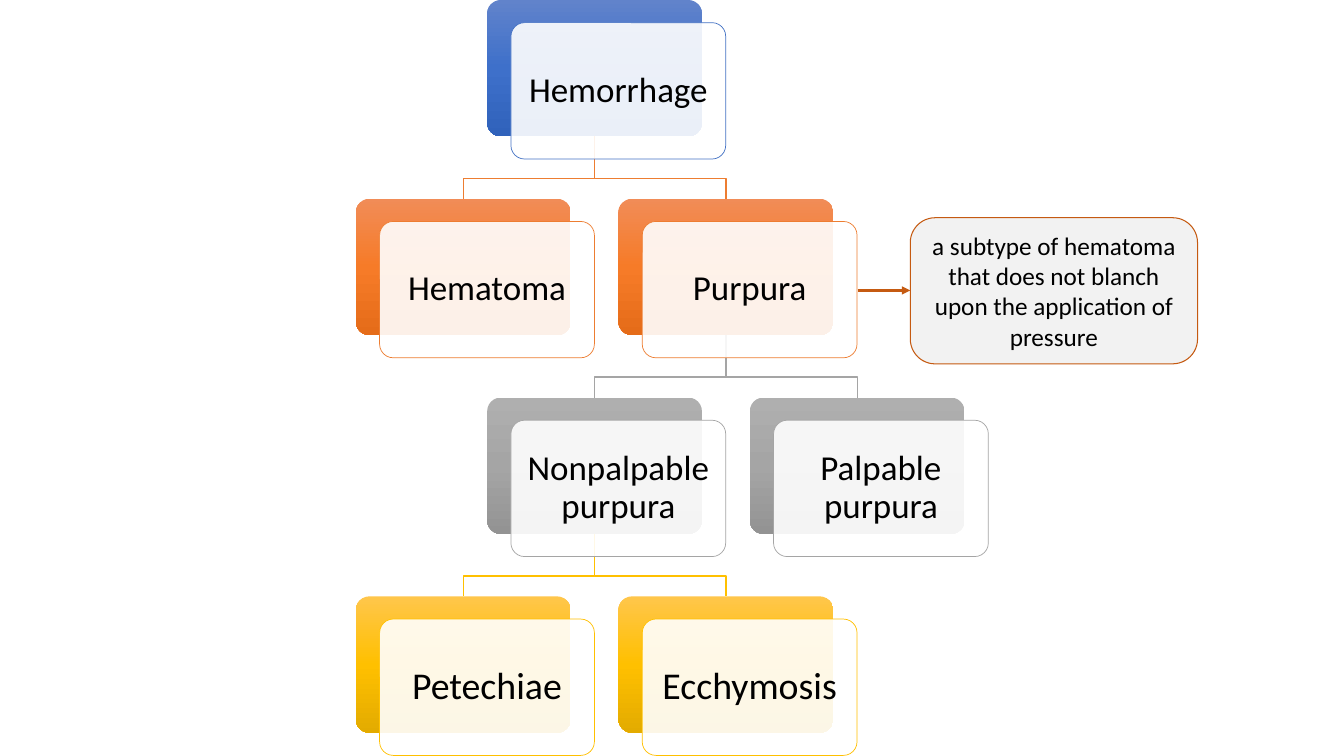
"""Build a slide with a tree of hemorrhage types and a note on purpura."""
from copy import deepcopy

from pptx import Presentation
from pptx.dml.color import RGBColor
from pptx.enum.shapes import MSO_CONNECTOR as CONN, MSO_SHAPE as SHAPE
from pptx.enum.text import MSO_ANCHOR as ANCHOR, PP_ALIGN as ALIGN
from pptx.oxml.ns import qn
from pptx.util import Pt
from lxml.etree import SubElement

COLORS = {
    "white": "FFFFFF", "text": "000000", "note": "F2F2F2", "rust": "C55A11",
    "blue": "4472C4", "orange": "ED7D31", "gray": "A5A5A5", "gold": "FFC000",
}
GRADIENTS = {
    "blue": ("6183CB", "3E70CA", "3062BB"),
    "orange": ("F18C57", "F67B28", "E56C19"),
    "gray": ("AFAFAF", "A5A5A5", "939393"),
    "gold": ("FFC64B", "FFC000", "E3AB00"),
}
LEVEL_COLORS = ("blue", "orange", "gray", "gold")
LEVEL_SIZES = (25, 25, 25, 27)
NODES = {
    "Hemorrhage": (0, 1, None),
    "Hematoma": (1, 0, "Hemorrhage"),
    "Purpura": (1, 2, "Hemorrhage"),
    "Nonpalpable purpura": (2, 1, "Purpura"),
    "Palpable purpura": (2, 3, "Purpura"),
    "Petechiae": (3, 0, "Nonpalpable purpura"),
    "Ecchymosis": (3, 2, "Nonpalpable purpura"),
}
LEFT, COL_STEP, ROW_STEP = 254.2, 93.8, 142
BOX_W, BOX_H = 153.4, 97.4
CARD_DX, CARD_DY = 17, 16.2
ELBOW = 30


def rgb(name):
    """Return the colour with this name."""
    return RGBColor.from_string(COLORS[name])


def corner(node):
    """Return the top left corner of a node's back box."""
    row, col, _ = NODES[node]
    return LEFT + col * COL_STEP, row * ROW_STEP


def set_line(sp, color, width):
    """Set the line colour and width of a shape."""
    sp.line.color.rgb = rgb(color)
    sp.line.width = Pt(width)


def add_link(slide, parent, child, color):
    """Draw an elbow line from a parent box to a child box."""
    (x1, y1), (x2, y2) = corner(parent), corner(child)
    x1, x2, y1 = x1 + BOX_W / 2, x2 + BOX_W / 2, y1 + BOX_H
    fb = slide.shapes.build_freeform(Pt(x1), Pt(y1))
    bends = [(x1, y1 + ELBOW), (x2, y1 + ELBOW), (x2, y2)]
    fb.add_line_segments([(Pt(x), Pt(y)) for x, y in bends], close=False)
    sp = fb.convert_to_shape()
    sp.shadow.inherit = False
    sp.fill.background()
    set_line(sp, color, 1)


def add_round_box(slide, x, y, w, h, adj):
    """Add a rounded rectangle without a shadow."""
    sp = slide.shapes.add_shape(SHAPE.ROUNDED_RECTANGLE, Pt(x), Pt(y), Pt(w), Pt(h))
    sp.adjustments[0] = adj
    sp.shadow.inherit = False
    return sp


def fill_solid(sp, color):
    """Give a shape a plain fill."""
    sp.fill.solid()
    sp.fill.fore_color.rgb = rgb(color)


def fill_gradient(sp, stops):
    """Give a shape a downward gradient of three colours."""
    sp.fill.gradient()
    sp.fill.gradient_angle = 270
    gs_list = sp._element.spPr.find(".//" + qn("a:gsLst"))
    gs_list.insert(1, deepcopy(gs_list[0]))
    for stop, pos, color in zip(sp.fill.gradient_stops, (0, 0.5, 1), stops):
        stop.position = pos
        stop.color.rgb = RGBColor.from_string(color)


def write(sp, text, size, inset_x, inset_y, spacing):
    """Write centred text in a shape."""
    tf = sp.text_frame
    frame_format = {
        "word_wrap": True, "vertical_anchor": ANCHOR.MIDDLE,
        "margin_left": Pt(inset_x), "margin_right": Pt(inset_x),
        "margin_top": Pt(inset_y), "margin_bottom": Pt(inset_y),
    }
    for name, value in frame_format.items():
        setattr(tf, name, value)
    p = tf.paragraphs[0]
    p.alignment, p.line_spacing = ALIGN.CENTER, spacing
    r = p.add_run()
    r.text = text
    for name, value in {"name": "Calibri", "size": Pt(size)}.items():
        setattr(r.font, name, value)
    r.font.color.rgb = rgb("text")


def add_node(slide, node):
    """Add a back box with a translucent labelled card over it."""
    x, y = corner(node)
    level = NODES[node][0]
    color, size = LEVEL_COLORS[level], LEVEL_SIZES[level]
    back = add_round_box(slide, x, y, BOX_W, BOX_H, 0.1)
    fill_gradient(back, GRADIENTS[color])
    back.line.fill.background()
    card = add_round_box(slide, x + CARD_DX, y + CARD_DY, BOX_W, BOX_H, 0.1)
    fill_solid(card, "white")
    clr = card._element.spPr.find(qn("a:solidFill"))[0]
    SubElement(clr, qn("a:alpha")).set("val", "90000")
    set_line(card, color, 0.5)
    write(card, node, size, size * 0.3, size * 0.3, 0.9)


def add_note(slide, text):
    """Add the note beside the tree."""
    sp = add_round_box(slide, 650.2, 155.5, 205.2, 104.4, 0.17)
    fill_solid(sp, "note")
    set_line(sp, "rust", 0.75)
    write(sp, text, 18, 7.2, 3.6, 1.0)


def add_arrow(slide, x1, x2, y):
    """Draw a level arrow."""
    sp = slide.shapes.add_connector(CONN.STRAIGHT, Pt(x1), Pt(y), Pt(x2), Pt(y))
    set_line(sp, "rust", 1.5)
    SubElement(sp.line._get_or_add_ln(), qn("a:tailEnd")).set("type", "triangle")
    SubElement(sp._element.spPr, qn("a:effectLst"))


def main():
    """Build and save the slide."""
    prs = Presentation()
    prs.slide_width, prs.slide_height = Pt(960), Pt(540)
    slide = prs.slides.add_slide(prs.slide_layouts[6])
    for node, (level, _, parent) in NODES.items():
        if parent:
            add_link(slide, parent, node, LEVEL_COLORS[level])
    for node in NODES:
        add_node(slide, node)
    add_note(slide, "a subtype of hematoma that does not blanch "
                    "upon the application of pressure")
    add_arrow(slide, 612.7, 650.2, 207.5)
    prs.save("out.pptx")


if __name__ == "__main__":
    main()
